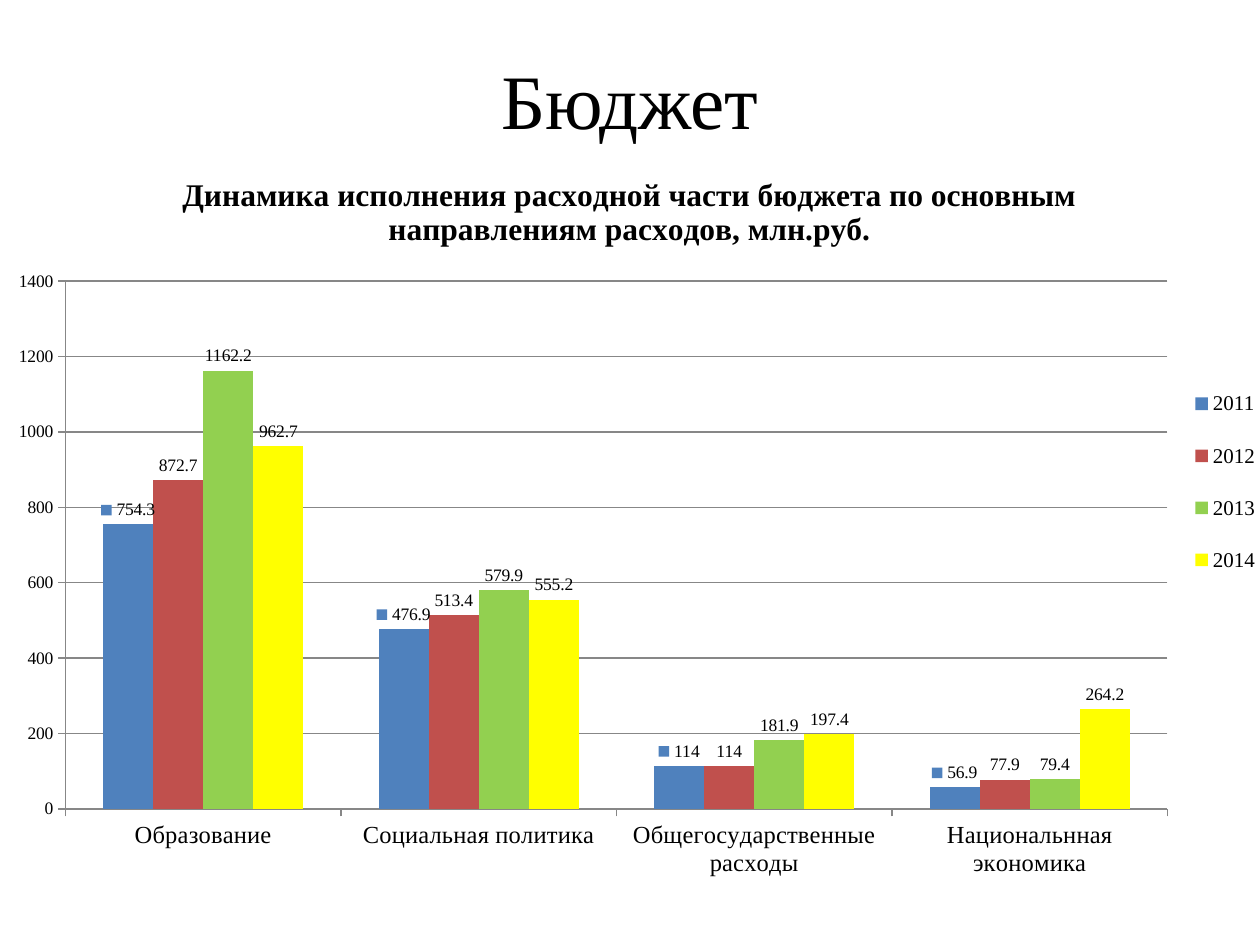
from dataclasses import dataclass

from lxml import etree
from pptx import Presentation
from pptx.chart.data import CategoryChartData
from pptx.dml.color import RGBColor
from pptx.enum import chart as ch, text
from pptx.oxml.ns import qn
from pptx.util import Inches, Pt


@dataclass(frozen=True)
class Theme:
    """Colours, font and type sizes of the slide."""
    font: str = "Times New Roman"
    ink: str = "000000"
    grid: str = "878787"
    bars: tuple = ("4F81BD", "C0504D", "92D050", "FFFF00")
    title: int = 44
    head: int = 18
    cats: int = 14
    legend: int = 12
    small: int = 10


THEME = Theme()
CATS = ("Образование", "Социальная политика",
        "Общегосударственные расходы", "Национальнная экономика")
DATA = {
    "2011": (754.3, 476.9, 114, 56.9),
    "2012": (872.7, 513.4, 114, 77.9),
    "2013": (1162.2, 579.9, 181.9, 79.4),
    "2014": (962.7, 555.2, 197.4, 264.2),
}


def style(font, size, bold=False):
    """Give a font the theme face and ink."""
    font.name = THEME.font
    font.size = Pt(size)
    font.bold = bold
    font.color.rgb = RGBColor.from_string(THEME.ink)


def rule(line):
    """Draw an axis or grid line in grey."""
    line.color.rgb = RGBColor.from_string(THEME.grid)
    line.width = Pt(0.75)


def place(node, index, box, inner=False):
    """Fix a chart part at a box given as fractions of the chart."""
    for old in node.findall(qn("c:layout")):
        node.remove(old)
    layout = etree.Element(qn("c:layout"))
    manual = etree.SubElement(layout, qn("c:manualLayout"))
    pairs = [("layoutTarget", "inner")] if inner else []
    pairs += [("xMode", "edge"), ("yMode", "edge")]
    pairs += zip("xywh", box)
    for tag, val in pairs:
        etree.SubElement(manual, qn("c:" + tag)).set("val", str(val))
    node.insert(index, layout)


def add_title(slide, box):
    """Write the slide title centred in its box."""
    frame = slide.shapes.add_textbox(*map(Inches, box)).text_frame
    frame.word_wrap = True
    frame.margin_top = Inches(0.12)
    frame.text = "Бюджет"
    para = frame.paragraphs[0]
    para.alignment = text.PP_ALIGN.CENTER
    style(para.runs[0].font, THEME.title)


def style_axes(chart):
    """Set scale, lines and type of both axes."""
    for axis, size in ((chart.category_axis, THEME.cats),
                       (chart.value_axis, THEME.small)):
        style(axis.tick_labels.font, size)
        axis.major_tick_mark = ch.XL_TICK_MARK.OUTSIDE
        rule(axis.format.line)
    axis = chart.value_axis
    axis.minimum_scale, axis.maximum_scale, axis.major_unit = 0, 1400, 200
    axis.has_major_gridlines = True
    rule(axis.major_gridlines.format.line)


def style_bars(plot):
    """Colour the bars and label their values."""
    plot.gap_width, plot.overlap = 150, 0
    plot.vary_by_categories = False
    for num, (series, color) in enumerate(zip(plot.series, THEME.bars)):
        series.format.fill.solid()
        series.format.fill.fore_color.rgb = RGBColor.from_string(color)
        labels = series.data_labels
        style(labels.font, THEME.small)
        labels.show_value = True
        labels.show_legend_key = num == 0
        labels.position = ch.XL_LABEL_POSITION.OUTSIDE_END


def add_spending(slide, box):
    """Chart the spending by field and year in its box."""
    data = CategoryChartData()
    data.categories = CATS
    for year, vals in DATA.items():
        data.add_series(year, vals)
    chart = slide.shapes.add_chart(
        ch.XL_CHART_TYPE.COLUMN_CLUSTERED, *map(Inches, box), data).chart
    style(chart.font, THEME.small)
    chart.has_title = True
    frame = chart.chart_title.text_frame
    frame.text = ("Динамика исполнения расходной части бюджета "
                  "по основным направлениям расходов, млн.руб.")
    style(frame.paragraphs[0].runs[0].font, THEME.head, True)
    chart.chart_title.include_in_layout = False
    style_axes(chart)
    style_bars(chart.plots[0])
    chart.has_legend = True
    legend = chart.legend
    legend.position = ch.XL_LEGEND_POSITION.RIGHT
    legend.include_in_layout = False
    style(legend.font, THEME.legend)
    area = chart.plots[0]._element.getparent()
    place(area, 0, (0.06, 0.18, 0.86, 0.71), inner=True)
    place(legend._element, 1, (0.93, 0.29, 0.07, 0.32))


def main():
    """Build the budget slide and save it."""
    deck = Presentation()
    deck.slide_width, deck.slide_height = Inches(10), Inches(7.5)
    slide = deck.slides.add_slide(deck.slide_layouts[6])
    add_spending(slide, (-0.09, 1.17, 10.17, 5.9))
    add_title(slide, (0.5, 0.3, 9, 1.25))
    deck.save("out.pptx")


if __name__ == "__main__":
    main()
